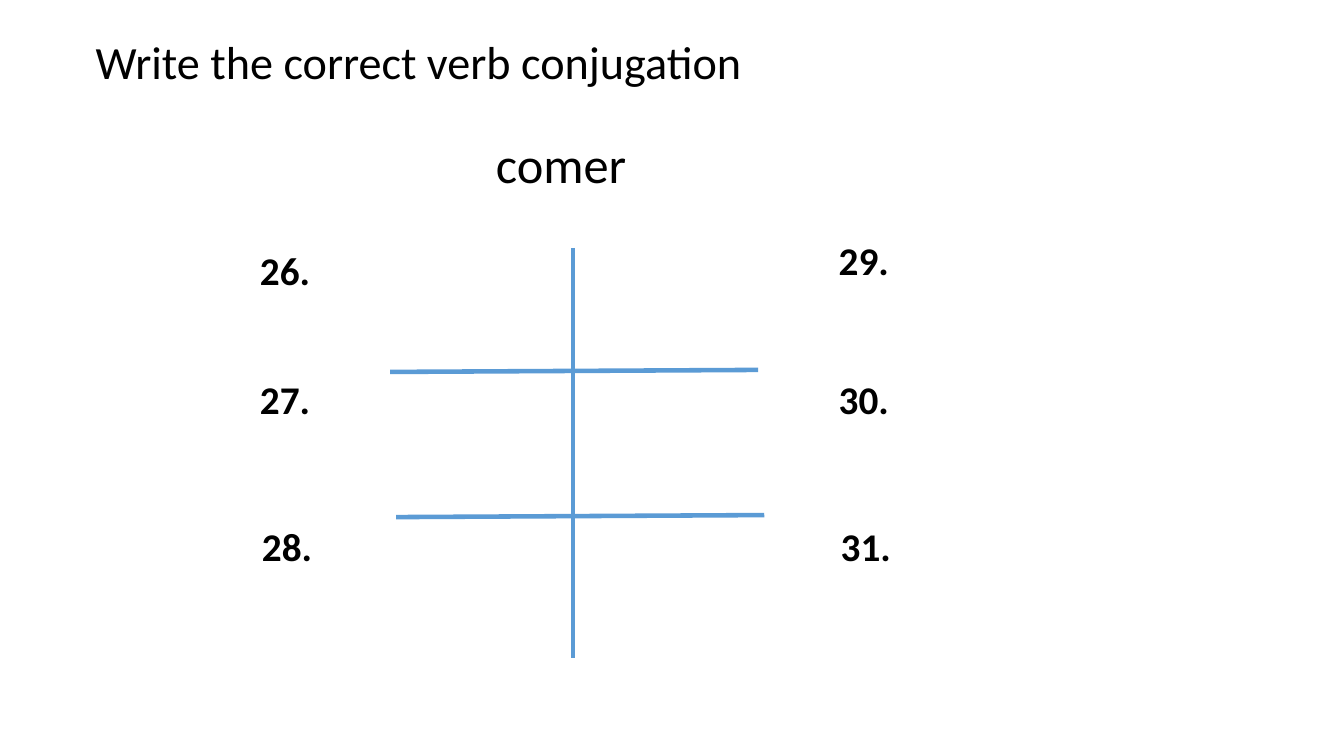
from lxml.etree import SubElement
from pptx import Presentation
from pptx.dml.color import RGBColor as RGB
from pptx.enum.shapes import MSO_CONNECTOR as Conn
from pptx.enum.text import MSO_AUTO_SIZE as Auto
from pptx.oxml.ns import qn
from pptx.util import Pt

PX = 9144  # 100 px to the inch
THEME = {
    "font": "Calibri",
    "ink": RGB(0x00, 0x00, 0x00),
    "rule": RGB(0x5B, 0x9B, 0xD5),
    "title": 33,
    "verb": 36,
    "label": 28,
}


def add_text(text, box, size, bold=False, wrap=True):
    shape = slide.shapes.add_textbox(*[n * PX for n in box])
    frame = shape.text_frame
    frame.word_wrap = wrap
    frame.auto_size = Auto.SHAPE_TO_FIT_TEXT
    run = frame.paragraphs[0].add_run()
    run.text = text
    style = {"name": THEME["font"], "size": Pt(THEME[size]), "bold": bold}
    for key, value in style.items():
        setattr(run.font, key, value)
    run.font.color.rgb = THEME["ink"]


deck = Presentation()
deck.slide_width, deck.slide_height = 1333 * PX, 750 * PX
slide = deck.slides.add_slide(deck.slide_layouts[6])

# Conjugation grid: one upright, two slightly rising rules
rules = [
    ((568, 246, 568, 653), 3),
    ((387, 369, 752, 367), 3.25),
    ((393, 513, 758, 511), 3.25),
]
for ends, width in rules:
    rule = slide.shapes.add_connector(Conn.STRAIGHT, *[n * PX for n in ends])
    rule.line.color.rgb = THEME["rule"]
    rule.line.width = Pt(width)
    SubElement(rule._element.spPr, qn("a:effectLst"))

add_text("comer", (482, 127, 151, 71), "verb", wrap=False)
add_text("Write the correct verb conjugation", (85, 28, 746, 66), "title")

# Numbered answers run down each column
columns = [(26, 248, (239, 367, 513)), (29, 822, (230, 367, 513))]
nudges = (0, 0, 2)
for first, left, tops in columns:
    for row, (top, nudge) in enumerate(zip(tops, nudges)):
        add_text(f"{first + row}.", (left + nudge, top, 71, 57), "label", bold=True)

deck.save("out.pptx")
